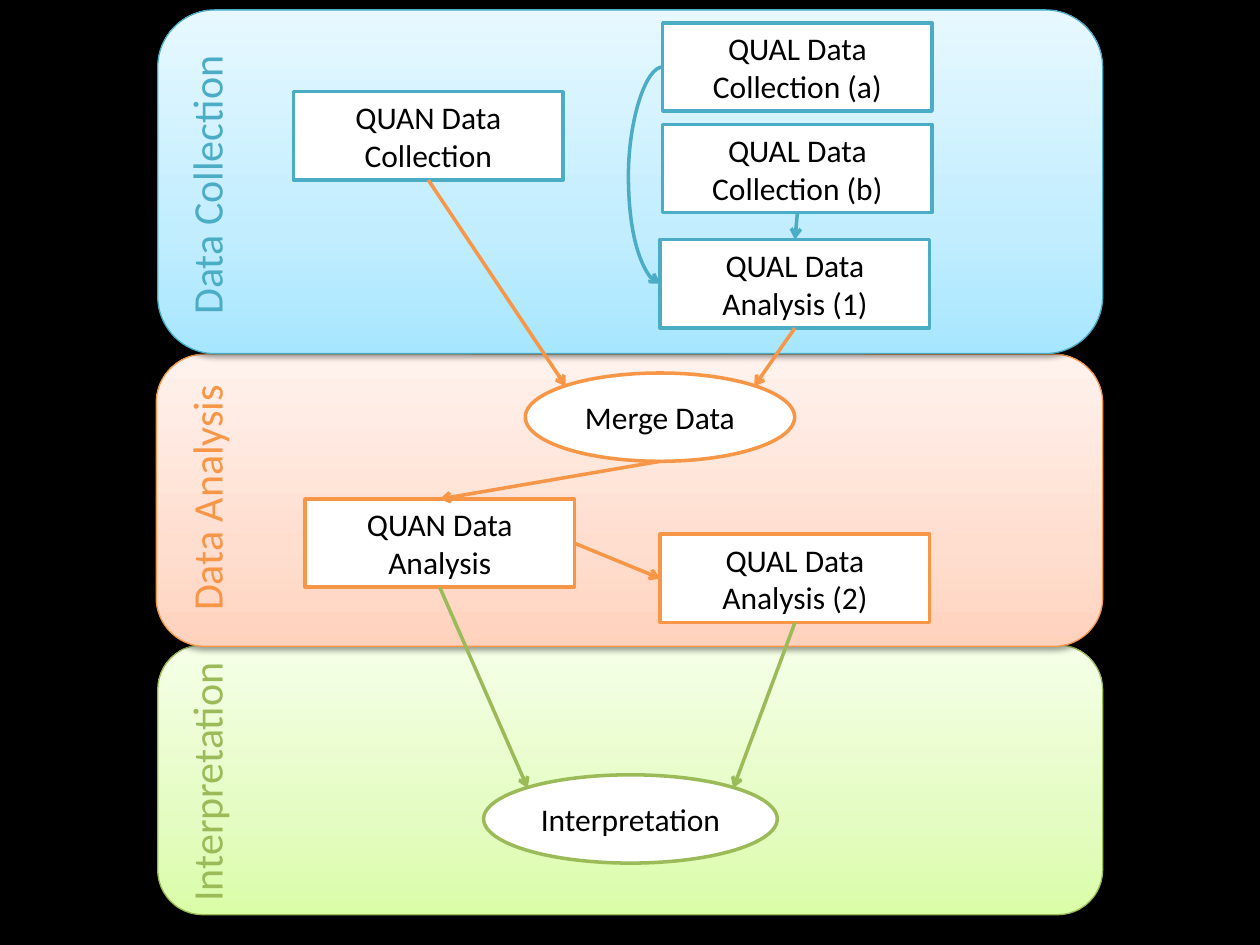
"""Build a mixed-methods research flow in three phases."""
from copy import deepcopy

from lxml.etree import SubElement
from pptx import Presentation
from pptx.dml.color import RGBColor
from pptx.enum.shapes import MSO_CONNECTOR, MSO_SHAPE
from pptx.enum.text import MSO_ANCHOR, MSO_AUTO_SIZE, PP_ALIGN
from pptx.oxml.ns import qn
from pptx.util import Cm, Pt

BLACK = RGBColor(0x00, 0x00, 0x00)
WHITE = RGBColor(0xFF, 0xFF, 0xFF)
BLUE = RGBColor(0x4B, 0xAC, 0xC6)
ORANGE = RGBColor(0xF7, 0x96, 0x46)
GREEN = RGBColor(0x9B, 0xBB, 0x59)
BLUE_EDGE = RGBColor(0x46, 0xAA, 0xC5)
GREEN_EDGE = RGBColor(0x98, 0xB9, 0x55)
BLUE_SHADES = [RGBColor(0xA7, 0xE6, 0xFF), RGBColor(0xC1, 0xED, 0xFF), RGBColor(0xE7, 0xF8, 0xFF)]
ORANGE_SHADES = [RGBColor(0xFF, 0xD2, 0xBD), RGBColor(0xFF, 0xDE, 0xD0), RGBColor(0xFF, 0xF2, 0xED)]
GREEN_SHADES = [RGBColor(0xDA, 0xFD, 0xA7), RGBColor(0xE4, 0xFC, 0xC2), RGBColor(0xF5, 0xFF, 0xE7)]
SHADE_STOPS = (0, 0.35, 1)
FONT = "Calibri"

BANDS = [
    ((3.18, 13.0, 19.05, 5.44), GREEN_SHADES, GREEN_EDGE),
    ((3.15, 7.14, 19.08, 5.89), ORANGE_SHADES, ORANGE),
    ((3.18, 0.2, 19.05, 6.93), BLUE_SHADES, BLUE_EDGE),
]
LABEL_CENTRE, LABEL_HEIGHT = 4.15, 1.27
LABELS = [
    ("Data Collection", 3.53, 6.12, BLUE),
    ("Data Analysis", 9.58, 5.97, ORANGE),
    ("Interpretation", 15.49, 5.87, GREEN),
]
STEP_WIDTH, STEP_HEIGHT = 5.43, 1.78
RECTANGLE, OVAL = MSO_SHAPE.RECTANGLE, MSO_SHAPE.OVAL
STEPS = [
    ("QUAN Data Collection", RECTANGLE, 5.92, 1.85, STEP_WIDTH, BLUE),
    ("QUAL Data Collection (a)", RECTANGLE, 13.36, 0.46, STEP_WIDTH, BLUE),
    ("QUAL Data Collection (b)", RECTANGLE, 13.36, 2.51, STEP_WIDTH, BLUE),
    ("QUAL Data Analysis (2)", RECTANGLE, 13.31, 10.77, STEP_WIDTH, ORANGE),
    ("QUAN Data Analysis", RECTANGLE, 6.15, 10.06, STEP_WIDTH, ORANGE),
    ("QUAL Data Analysis (1)", RECTANGLE, 13.31, 4.83, STEP_WIDTH, BLUE),
    ("Merge Data", OVAL, 10.59, 7.52, STEP_WIDTH, ORANGE),
    ("Interpretation", OVAL, 9.75, 15.62, 5.92, GREEN),
]
ARROWS = [
    ("QUAN Data Collection", "bottom", "Merge Data", "top left", ORANGE),
    ("QUAL Data Analysis (1)", "bottom", "Merge Data", "top right", ORANGE),
    ("Merge Data", "bottom", "QUAN Data Analysis", "top", ORANGE),
    ("QUAN Data Analysis", "bottom", "Interpretation", "top left", GREEN),
    ("QUAL Data Analysis (2)", "bottom", "Interpretation", "top right", GREEN),
    ("QUAN Data Analysis", "right", "QUAL Data Analysis (2)", "left", ORANGE),
    ("QUAL Data Collection (b)", "bottom", "QUAL Data Analysis (1)", "top", BLUE),
]
CURVE = ("QUAL Data Collection (a)", "left", "QUAL Data Analysis (1)", "left", BLUE)
CURVE_REACH = Cm(0.69)
SITES = {
    "top": (0.5, 0), "left": (0, 0.5), "bottom": (0.5, 1), "right": (1, 0.5),
    "top left": (0.15, 0.15), "top right": (0.85, 0.15),
}
SIDE_NUMBERS = {"top": 0, "left": 1, "bottom": 2, "right": 3}


def add_band(page, area, shades, edge):
    band = page.shapes.add_shape(MSO_SHAPE.ROUNDED_RECTANGLE, *map(Cm, area))
    band.line.color.rgb = edge
    band.line.width = Pt(0.75)
    band.fill.gradient()
    band.fill.gradient_angle = 90
    properties = band._element.spPr
    stop_list = properties.find(qn("a:gradFill")).find(qn("a:gsLst"))
    stop_list.append(deepcopy(stop_list[-1]))
    for stop, position, shade in zip(band.fill.gradient_stops, SHADE_STOPS, shades):
        stop.position = position
        stop.color.rgb = shade
    effects = SubElement(properties, qn("a:effectLst"))
    shadow = SubElement(effects, qn("a:outerShdw"), blurRad="40000", dist="20000",
                        dir="5400000", rotWithShape="0")
    color = SubElement(shadow, qn("a:srgbClr"), val="000000")
    SubElement(color, qn("a:alpha"), val="38000")


def write(box, text, size, color, alignment):
    box.text_frame.word_wrap = True
    para = box.text_frame.paragraphs[0]
    para.text = text
    para.alignment = alignment
    para.font.name = FONT
    para.font.size = Pt(size)
    para.font.color.rgb = color


def add_step(page, text, kind, left, top, width, color):
    step = page.shapes.add_shape(kind, Cm(left), Cm(top), Cm(width), Cm(STEP_HEIGHT))
    step.shadow.inherit = False
    step.fill.solid()
    step.fill.fore_color.rgb = WHITE
    step.line.color.rgb = color
    step.line.width = Pt(2)
    step.text_frame.vertical_anchor = MSO_ANCHOR.MIDDLE
    write(step, text, 18, BLACK, PP_ALIGN.CENTER)
    return step


def site(step, name):
    across, down = SITES[name]
    return int(step.left + across * step.width), int(step.top + down * step.height)


def add_arrow(page, kind, start, start_site, end, end_site, color):
    arrow = page.shapes.add_connector(kind, *site(start, start_site), *site(end, end_site))
    arrow.line.color.rgb = color
    arrow.line.width = Pt(2)
    SubElement(arrow.line._get_or_add_ln(), qn("a:tailEnd"), type="arrow")
    SubElement(arrow._element.spPr, qn("a:effectLst"))
    if kind == MSO_CONNECTOR.STRAIGHT:
        if start.auto_shape_type == RECTANGLE:
            arrow.begin_connect(start, SIDE_NUMBERS[start_site])
        if end.auto_shape_type == RECTANGLE:
            arrow.end_connect(end, SIDE_NUMBERS[end_site])
    return arrow


def add_label(page, text, middle, width, color):
    label = page.shapes.add_textbox(Cm(LABEL_CENTRE - width / 2), Cm(middle - LABEL_HEIGHT / 2),
                                    Cm(width), Cm(LABEL_HEIGHT))
    label.rotation = 270
    write(label, text, 24, color, PP_ALIGN.LEFT)
    label.text_frame.auto_size = MSO_AUTO_SIZE.SHAPE_TO_FIT_TEXT


def main():
    deck = Presentation()
    deck.slide_width, deck.slide_height = Cm(25.4), Cm(19.05)
    page = deck.slides.add_slide(deck.slide_layouts[6])
    page.background.fill.solid()
    page.background.fill.fore_color.rgb = BLACK
    for band in BANDS:
        add_band(page, *band)
    steps = {step[0]: add_step(page, *step) for step in STEPS}
    for start, start_site, end, end_site, color in ARROWS:
        add_arrow(page, MSO_CONNECTOR.STRAIGHT, steps[start], start_site,
                  steps[end], end_site, color)
    start, start_site, end, end_site, color = CURVE
    curve = add_arrow(page, MSO_CONNECTOR.CURVE, steps[start], start_site,
                      steps[end], end_site, color)
    bend = round(CURVE_REACH / curve.width * 100000)
    guides = curve._element.spPr.find(qn("a:prstGeom")).get_or_add_avLst()
    SubElement(guides, qn("a:gd"), name="adj1", fmla=f"val {bend}")
    for label in LABELS:
        add_label(page, *label)
    deck.save("out.pptx")


if __name__ == "__main__":
    main()
